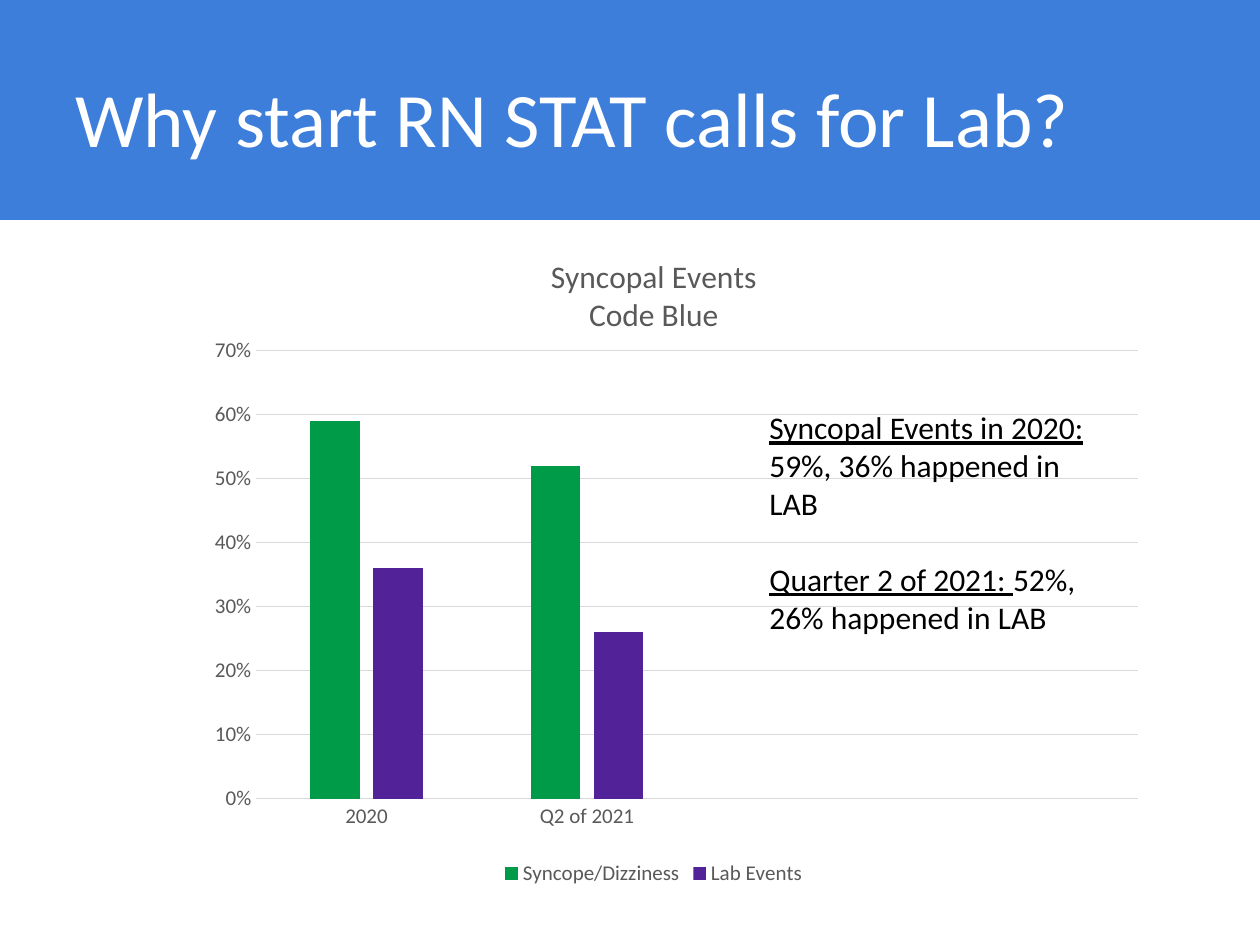
from lxml import etree
from pptx import Presentation
from pptx.chart.data import CategoryChartData
from pptx.dml.color import RGBColor
from pptx.enum.chart import XL_CHART_TYPE as ChartType, XL_LEGEND_POSITION as LegendPosition
from pptx.enum.chart import XL_TICK_MARK as TickMark
from pptx.enum.shapes import MSO_SHAPE as Preset
from pptx.enum.text import MSO_ANCHOR as Anchor
from pptx.oxml.ns import qn
from pptx.util import Pt

EMU_PER_PX = 914400 / 126
FONT = "Calibri"
COLORS = {
    "banner": "3D7EDB", "white": "FFFFFF", "black": "000000", "label": "595959",
    "grid": "D9D9D9", "syncope": "009B48", "lab": "522398",
}


def px(length):
    return round(length * EMU_PER_PX)


def color(name):
    return RGBColor.from_string(COLORS[name])


class SlideBuilder:
    def __init__(self, slide):
        self.slide = slide

    def style(self, font, size, color_name):
        font.name = FONT
        font.size = Pt(size)
        font.bold = False
        font.color.rgb = color(color_name)

    def band(self, *box, fill):
        band = self.slide.shapes.add_shape(Preset.RECTANGLE, *map(px, box))
        band.shadow.inherit = False
        band.fill.solid()
        band.fill.fore_color.rgb = color(fill)
        band.line.fill.background()

    def text(self, *box, paragraphs, size, color_name, anchor=Anchor.TOP, gap=0):
        """Add paragraphs of (text, underlined) runs, with gap points between them."""
        frame = self.slide.shapes.add_textbox(*map(px, box)).text_frame
        frame.word_wrap = True
        frame.vertical_anchor = anchor
        for index, runs in enumerate(paragraphs):
            paragraph = frame.add_paragraph() if index else frame.paragraphs[0]
            if index:
                paragraph.space_before = Pt(gap)
            for words, underlined in runs:
                run = paragraph.add_run()
                run.text = words
                self.style(run.font, size, color_name)
                run.font.underline = underlined

    def column_chart(self, *box, title, categories, series, plot_area):
        """Add clustered columns; series holds (name, values, color name)."""
        data = CategoryChartData(number_format="0%")
        data.categories = categories
        for name, values, _ in series:
            data.add_series(name, values)
        chart = self.slide.shapes.add_chart(
            ChartType.COLUMN_CLUSTERED, *map(px, box), data).chart
        self.style(chart.font, 12, "label")

        chart.has_title = True
        heading = chart.chart_title
        heading.include_in_layout = False
        heading.text_frame.text = title
        for paragraph in heading.text_frame.paragraphs:
            self.style(paragraph.runs[0].font, 18, "label")

        chart.has_legend = True
        chart.legend.position = LegendPosition.BOTTOM
        chart.legend.include_in_layout = False
        self.style(chart.legend.font, 12, "label")

        for axis in (chart.category_axis, chart.value_axis):
            axis.major_tick_mark = axis.minor_tick_mark = TickMark.NONE
            self.style(axis.tick_labels.font, 12, "label")
        value_axis = chart.value_axis
        value_axis.minimum_scale, value_axis.maximum_scale = 0, 0.7
        value_axis.major_unit = 0.1
        value_axis.tick_labels.number_format = "0%"
        value_axis.tick_labels.number_format_is_linked = False
        value_axis.format.line.fill.background()
        for line in (chart.category_axis.format.line, value_axis.major_gridlines.format.line):
            line.color.rgb = color("grid")
            line.width = Pt(0.75)

        columns = chart.plots[0]
        columns.vary_by_categories = False
        columns.gap_width, columns.overlap = 219, -27
        for column, (_, _, fill) in zip(columns.series, series):
            column.format.fill.solid()
            column.format.fill.fore_color.rgb = color(fill)
        self.place_plot(chart, plot_area)

    def place_plot(self, chart, fractions):
        """Fix the inner plot area as x, y, w, h fractions of the chart."""
        plot = chart.element.find(".//" + qn("c:plotArea"))
        layout = plot.find(qn("c:layout"))
        if layout is None:
            layout = etree.Element(qn("c:layout"))
            plot.insert(0, layout)
        manual = etree.SubElement(layout, qn("c:manualLayout"))
        settings = [("layoutTarget", "inner"), ("xMode", "edge"), ("yMode", "edge")]
        settings += zip("xywh", map(str, fractions))
        for tag, value in settings:
            etree.SubElement(manual, qn("c:" + tag)).set("val", value)


def main():
    deck = Presentation()
    deck.slide_width, deck.slide_height = px(1260), px(945)
    page = SlideBuilder(deck.slides.add_slide(deck.slide_layouts[6]))

    page.band(0, 0, 1260, 220, fill="banner")
    page.text(63, 38, 1094, 158, paragraphs=[[("Why start RN STAT calls for Lab?", False)]],
              size=44, color_name="white", anchor=Anchor.MIDDLE)
    page.column_chart(
        169, 232, 970, 659,
        title="Syncopal Events\nCode Blue",
        categories=["2020", "Q2 of 2021", "", ""],
        series=[("Syncope/Dizziness", (0.59, 0.52, None, None), "syncope"),
                ("Lab Events", (0.36, 0.26, None, None), "lab")],
        plot_area=(0.09, 0.18, 0.91, 0.68))
    page.text(
        757, 402, 354, 280,
        paragraphs=[
            [("Syncopal Events in 2020: ", True), ("59%, 36% happened in LAB", False)],
            [("Quarter 2 of 2021: ", True), ("52%, 26% happened in LAB", False)],
        ],
        size=18, color_name="black", gap=22)
    deck.save("out.pptx")


if __name__ == "__main__":
    main()
